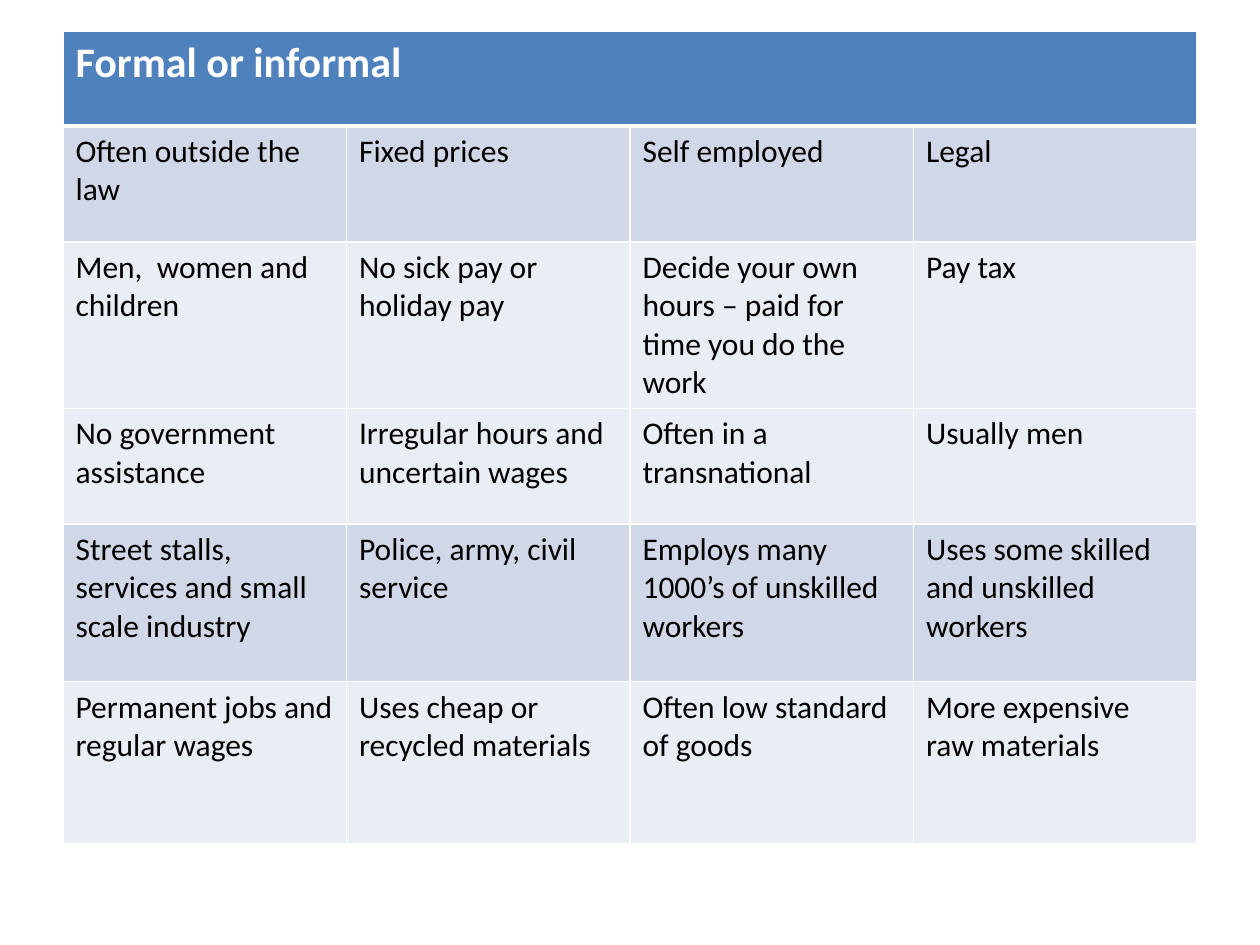
from lxml import etree
from pptx import Presentation
from pptx.dml.color import RGBColor
from pptx.oxml.ns import qn
from pptx.util import Inches, Pt

WHITE = RGBColor(0xFF, 0xFF, 0xFF)
BLACK = RGBColor(0x00, 0x00, 0x00)
HEADER_BLUE = RGBColor(0x4F, 0x81, 0xBD)
DARK_BAND = RGBColor(0xD0, 0xD8, 0xE8)
LIGHT_BAND = RGBColor(0xE9, 0xED, 0xF4)
FONT = "Calibri"

HEADING = "Formal or informal"
# Each row: height in inches, band colour, statements to sort
STATEMENT_ROWS = [
    (0.92, DARK_BAND, ["Often outside the law", "Fixed prices", "Self employed", "Legal"]),
    (0.92, LIGHT_BAND, ["Men,  women and children", "No sick pay or holiday pay",
                        "Decide your own hours – paid for time you do the work", "Pay tax"]),
    (0.92, LIGHT_BAND, ["No government assistance", "Irregular hours and uncertain wages",
                        "Often in a transnational", "Usually men"]),
    (1.25, DARK_BAND, ["Street stalls, services and small scale industry",
                       "Police, army, civil service",
                       "Employs many 1000’s of unskilled workers",
                       "Uses some skilled and unskilled workers"]),
    (1.29, LIGHT_BAND, ["Permanent jobs and regular wages", "Uses cheap or recycled materials",
                        "Often low standard of goods", "More expensive raw materials"]),
]
HEADING_HEIGHT = 0.75
COLUMN_COUNT = 4


def write_text(cell, text, size=18, color=BLACK, bold=False):
    paragraph = cell.text_frame.paragraphs[0]
    run = paragraph.add_run()
    run.text = text
    run.font.name = FONT
    run.font.size = Pt(size)
    run.font.bold = bold
    run.font.color.rgb = color


def format_cell(cell, fill, top=1, bottom=1):
    # Borders come before the fill in the cell properties
    properties = cell._tc.get_or_add_tcPr()
    for side, width in (("L", 1), ("R", 1), ("T", top), ("B", bottom)):
        border = etree.SubElement(properties, qn(f"a:ln{side}"), w=str(Pt(width)))
        line_fill = etree.SubElement(border, qn("a:solidFill"))
        etree.SubElement(line_fill, qn("a:srgbClr"), val=str(WHITE))
    cell.fill.solid()
    cell.fill.fore_color.rgb = fill


def add_sorting_table(slide, left, top, width, height):
    table = slide.shapes.add_table(len(STATEMENT_ROWS) + 1, COLUMN_COUNT,
                                   left, top, width, height).table
    for column in table.columns:
        column.width = width // COLUMN_COUNT

    # Heading across all columns
    table.rows[0].height = Inches(HEADING_HEIGHT)
    heading = table.cell(0, 0)
    heading.merge(table.cell(0, COLUMN_COUNT - 1))
    for cell in table.rows[0].cells:
        format_cell(cell, HEADER_BLUE, bottom=3)
    write_text(heading, HEADING, size=24, color=WHITE, bold=True)

    # Statements
    for row_number, (row_height, band, statements) in enumerate(STATEMENT_ROWS, start=1):
        table.rows[row_number].height = Inches(row_height)
        for cell, statement in zip(table.rows[row_number].cells, statements):
            format_cell(cell, band, top=3 if row_number == 1 else 1)
            write_text(cell, statement)


def main():
    presentation = Presentation()
    presentation.slide_width = Inches(10)
    presentation.slide_height = Inches(7.5)
    blank_layout = presentation.slide_layouts[6]
    slide = presentation.slides.add_slide(blank_layout)
    table_height = HEADING_HEIGHT + sum(row[0] for row in STATEMENT_ROWS)
    add_sorting_table(slide, Inches(0.5), Inches(0.25), Inches(9), Inches(table_height))
    presentation.save("out.pptx")


if __name__ == "__main__":
    main()
